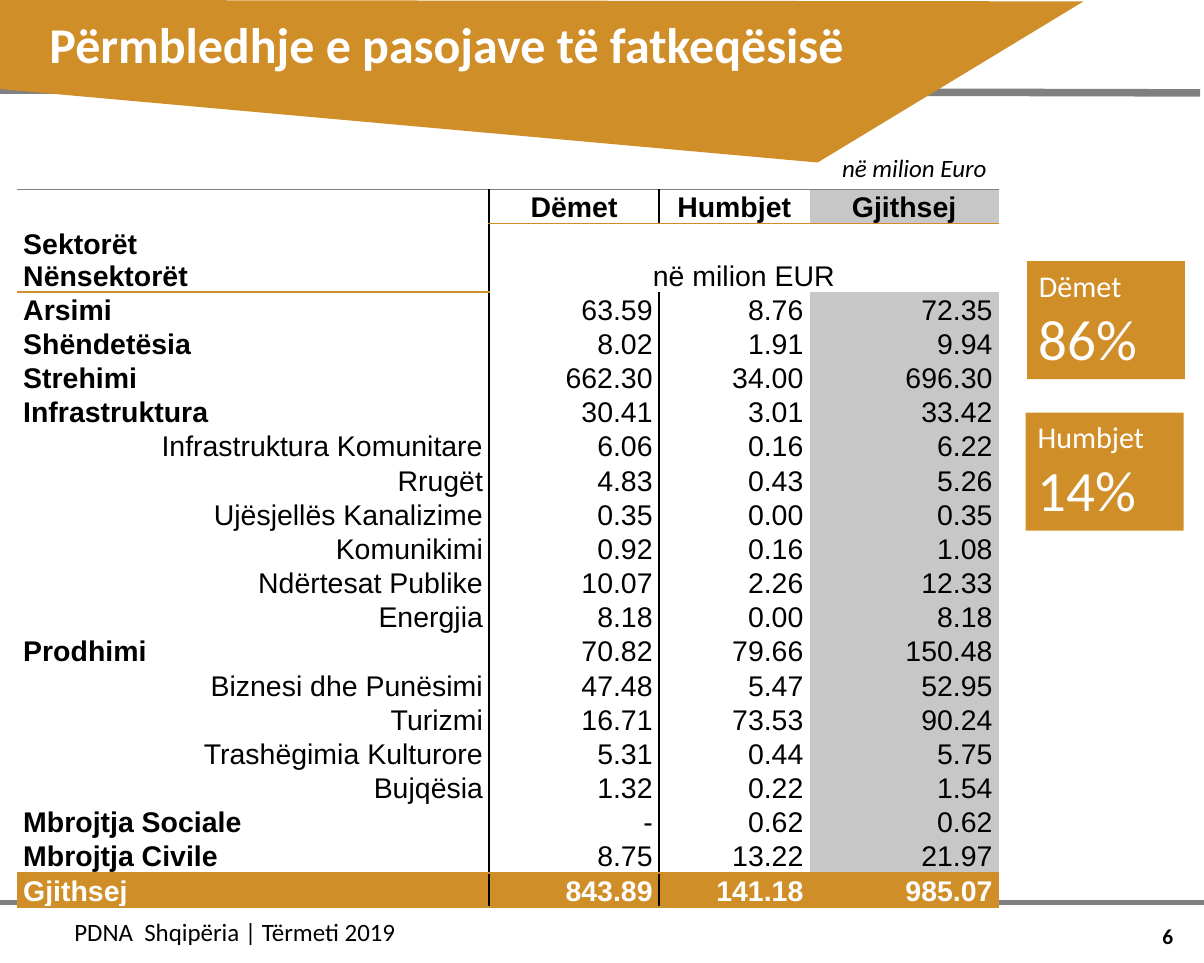
import pptx
import pptx.util
import pptx.dml.color
import pptx.enum.shapes
import pptx.enum.text
import pptx.oxml
import pptx.oxml.ns

Cm, Pt = pptx.util.Cm, pptx.util.Pt
ALIGN = pptx.enum.text.PP_ALIGN
ANCHOR = pptx.enum.text.MSO_ANCHOR

COLORS = {"gold": "D08E29", "gray": "808080", "silver": "C7C7C7",
          "black": "000000", "white": "FFFFFF"}

TITLE = "Përmbledhje e pasojave të fatkeqësisë"
FOOTER = "PDNA  Shqipëria | Tërmeti 2019"
UNIT = "në milion Euro"
PAGE = "6"
HEADERS = ["Dëmet", "Humbjet", "Gjithsej"]
SECTOR_LINES = ["Sektorët", "Nënsektorët"]
TABLE_UNIT = "në milion EUR"
SECTORS = [
    ("Arsimi", "63.59", "8.76", "72.35"),
    ("Shëndetësia", "8.02", "1.91", "9.94"),
    ("Strehimi", "662.30", "34.00", "696.30"),
    ("Infrastruktura", "30.41", "3.01", "33.42"),
    ("Infrastruktura Komunitare", "6.06", "0.16", "6.22"),
    ("Rrugët", "4.83", "0.43", "5.26"),
    ("Ujësjellës Kanalizime", "0.35", "0.00", "0.35"),
    ("Komunikimi", "0.92", "0.16", "1.08"),
    ("Ndërtesat Publike", "10.07", "2.26", "12.33"),
    ("Energjia", "8.18", "0.00", "8.18"),
    ("Prodhimi", "70.82", "79.66", "150.48"),
    ("Biznesi dhe Punësimi", "47.48", "5.47", "52.95"),
    ("Turizmi", "16.71", "73.53", "90.24"),
    ("Trashëgimia Kulturore", "5.31", "0.44", "5.75"),
    ("Bujqësia", "1.32", "0.22", "1.54"),
    ("Mbrojtja Sociale", "-", "0.62", "0.62"),
    ("Mbrojtja Civile", "8.75", "13.22", "21.97"),
    ("Gjithsej", "843.89", "141.18", "985.07"),
]
MAIN_SECTORS = {"Arsimi", "Shëndetësia", "Strehimi", "Infrastruktura", "Prodhimi",
                "Mbrojtja Sociale", "Mbrojtja Civile", "Gjithsej"}
SHARES = [("Dëmet", "86%", 21.67, 5.51), ("Humbjet", "14%", 21.64, 8.71)]

RULES = [((0, 1.9), (25.32, 1.96), 4.5), ((0, 19.05), (25.4, 19.05), 3)]
BANNER = [(0, 0), (0, 1.88), (17.25, 3.43), (22.86, 0.03)]
COL_WIDTHS = [9.96, 3.58, 3.18, 3.99]
ROW_HEIGHT = 0.72


def rgb(name):
    return pptx.dml.color.RGBColor.from_string(COLORS[name])


def paint(sp, name):
    sp.shadow.inherit = False
    sp.fill.solid()
    sp.fill.fore_color.rgb = rgb(name)
    sp.line.fill.background()


def add_run(p, text, size, color="black", font="Calibri", bold=False, italic=False):
    r = p.add_run()
    r.text = text
    r.font.name, r.font.size = font, Pt(size)
    r.font.bold, r.font.italic = bold, italic
    r.font.color.rgb = rgb(color)


def add_label(s, box, text, size, align, anchor, **style):
    tf = s.shapes.add_textbox(*map(Cm, box)).text_frame
    tf.word_wrap = True
    tf.vertical_anchor = anchor
    tf.paragraphs[0].alignment = align
    add_run(tf.paragraphs[0], text, size, **style)
    return tf


def column_edge(row, edge):
    if edge in (1, 2) and (row, edge) != (1, 2):
        return "black", 1
    return None


def row_edge(edge, col, last):
    if edge == 0:
        return "gray", 0.5
    if edge in (1, last - 1, last) or (edge, col) == (2, 0):
        return "gold", 1
    return None


def set_borders(cell, row, col, last):
    tcPr = cell._tc.get_or_add_tcPr()
    edges = [("lnL", column_edge(row, col)), ("lnR", column_edge(row, col + 1)),
             ("lnT", row_edge(row, col, last)), ("lnB", row_edge(row + 1, col, last))]
    for i, (tag, edge) in enumerate(edges):
        if edge:
            color, width = edge
            size = f' w="{int(Pt(width))}"'
            fill = f'<a:solidFill><a:srgbClr val="{COLORS[color]}"/></a:solidFill>'
        else:
            size, fill = "", "<a:noFill/>"
        ns = pptx.oxml.ns.nsdecls("a")
        tcPr.insert(i, pptx.oxml.parse_xml(f"<a:{tag} {ns}{size}>{fill}</a:{tag}>"))


def cell_fill(row, col, last):
    if row == last - 1:
        return "gold"
    return "silver" if col == 3 and row != 1 else None


def add_loss_table(s):
    rows = [["", *HEADERS], ["", TABLE_UNIT, "", ""], *SECTORS]
    last = len(rows)
    heights = [ROW_HEIGHT * (2 if i == 1 else 1) for i in range(last)]
    table = s.shapes.add_table(last, len(COL_WIDTHS), Cm(0.36), Cm(4),
                               Cm(sum(COL_WIDTHS)), Cm(sum(heights))).table
    table.first_row = table.horz_banding = False
    for column, width in zip(table.columns, COL_WIDTHS):
        column.width = Cm(width)
    for i, values in enumerate(rows):
        table.rows[i].height = Cm(heights[i])
        for j, text in enumerate(values):
            cell = table.cell(i, j)
            cell.margin_left = cell.margin_right = Cm(0.13)
            cell.margin_top = cell.margin_bottom = 0
            cell.vertical_anchor = ANCHOR.BOTTOM
            fill = cell_fill(i, j, last)
            if fill:
                cell.fill.solid()
                cell.fill.fore_color.rgb = rgb(fill)
            else:
                cell.fill.background()
            set_borders(cell, i, j, last)
            p = cell.text_frame.paragraphs[0]
            p.font.size = Pt(17)
            main = j == 0 and text in MAIN_SECTORS
            p.alignment = ALIGN.CENTER if i < 2 else ALIGN.LEFT if main else ALIGN.RIGHT
            if text:
                add_run(p, text, 17, "white" if i == last - 1 else "black", "Arial",
                        bold=main or i in (0, last - 1))
    table.cell(0, 0).merge(table.cell(1, 0))
    table.cell(1, 1).merge(table.cell(1, 3))
    p = table.cell(0, 0).text_frame.paragraphs[0]
    p.alignment = ALIGN.LEFT
    add_run(p, SECTOR_LINES[0], 17, font="Arial", bold=True)
    p.add_line_break()
    add_run(p, SECTOR_LINES[1], 17, font="Arial", bold=True)


def add_rule(s, start, end, width):
    line = s.shapes.add_connector(pptx.enum.shapes.MSO_CONNECTOR.STRAIGHT,
                                  *map(Cm, start + end))
    line.line.color.rgb = rgb("gray")
    line.line.width = Pt(width)
    spPr = line.element.spPr
    spPr.append(spPr.makeelement(pptx.oxml.ns.qn("a:effectLst"), {}))


def add_banner(s):
    points = [(Cm(x), Cm(y)) for x, y in BANNER]
    builder = s.shapes.build_freeform(*points[0])
    builder.add_line_segments(points[1:], close=True)
    paint(builder.convert_to_shape(), "gold")


def add_title(s):
    sp = s.shapes.title
    sp.element.getparent().append(sp.element)
    sp.left, sp.top, sp.width, sp.height = map(Cm, (0.79, 0, 23.37, 1.83))
    tf = sp.text_frame
    tf.auto_size = pptx.enum.text.MSO_AUTO_SIZE.NONE
    tf.vertical_anchor = ANCHOR.MIDDLE
    tf.paragraphs[0].alignment = ALIGN.LEFT
    add_run(tf.paragraphs[0], TITLE, 29.9, "white", bold=True)


def add_share(s, name, share, left, top):
    sp = s.shapes.add_shape(pptx.enum.shapes.MSO_SHAPE.RECTANGLE,
                            Cm(left), Cm(top), Cm(3.33), Cm(2.49))
    paint(sp, "gold")
    tf = sp.text_frame
    tf.word_wrap = True
    tf.vertical_anchor = ANCHOR.TOP
    for p, text, size in ((tf.paragraphs[0], name, 18), (tf.add_paragraph(), share, 34.1)):
        p.alignment = ALIGN.LEFT
        add_run(p, text, size, "white")


def main():
    prs = pptx.Presentation()
    prs.slide_width, prs.slide_height = Cm(25.4), Cm(20.32)
    s = prs.slides.add_slide(prs.slide_layouts[5])
    for rule in RULES:
        add_rule(s, *rule)
    add_banner(s)
    footer = add_label(s, (0.94, 19.2, 10.03, 1.04), FOOTER, 14.9, ALIGN.LEFT, ANCHOR.MIDDLE)
    footer.margin_left, footer.margin_top = Cm(0.63), 0
    add_title(s)
    add_label(s, (17.2, 3.1, 3.86, 0.89), UNIT, 14.9, ALIGN.RIGHT, ANCHOR.TOP, italic=True)
    add_label(s, (19.28, 19.2, 5.72, 1.09), PAGE, 12.8, ALIGN.RIGHT, ANCHOR.MIDDLE, bold=True)
    add_loss_table(s)
    for share in SHARES:
        add_share(s, *share)
    prs.save("out.pptx")


if __name__ == "__main__":
    main()
